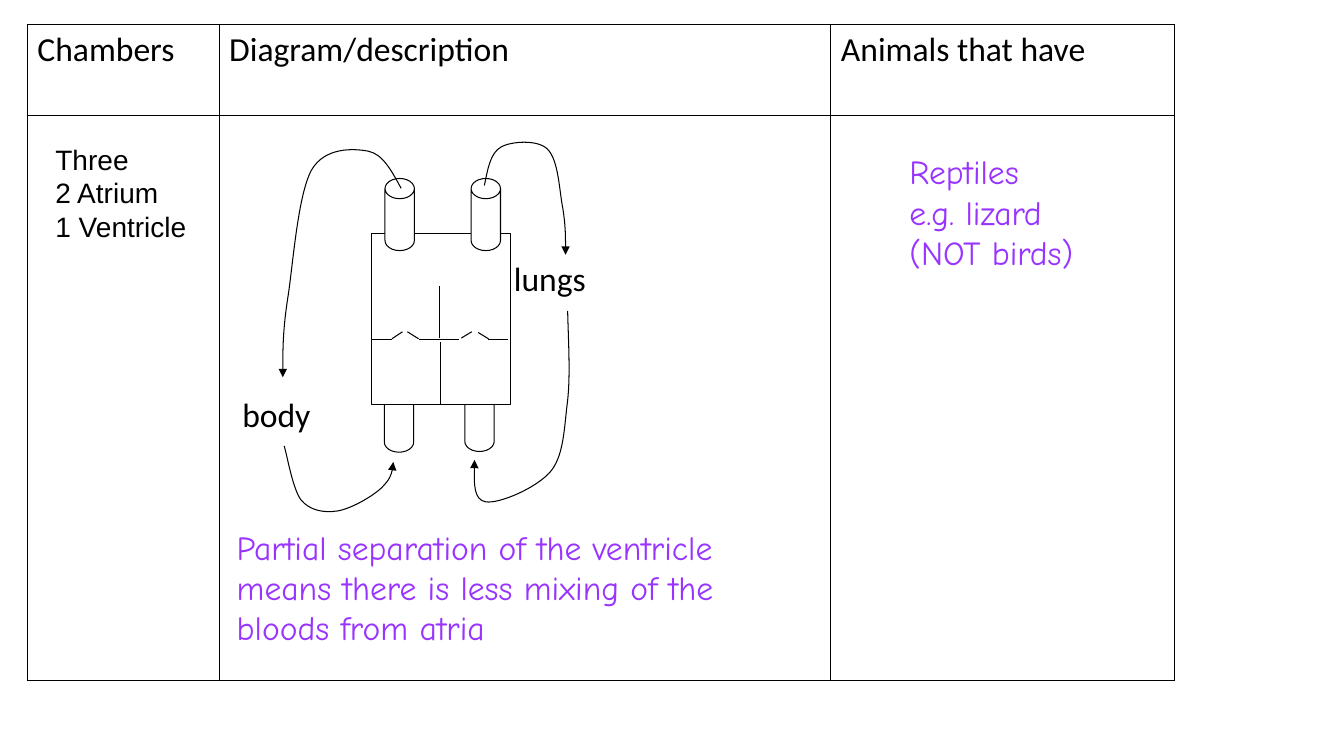
import pptx
import pptx.dml.color
import pptx.enum.dml
import pptx.enum.shapes
import pptx.enum.text
import pptx.oxml
import pptx.util
from lxml import etree

Pt = pptx.util.Pt
SHAPE = pptx.enum.shapes.MSO_SHAPE
BLACK = pptx.dml.color.RGBColor(0x00, 0x00, 0x00)
WHITE = pptx.dml.color.RGBColor(0xFF, 0xFF, 0xFF)
PURPLE = pptx.dml.color.RGBColor(0x99, 0x33, 0xFF)
NAMESPACE = "http://schemas.openxmlformats.org/drawingml/2006/main"

presentation = pptx.Presentation()
presentation.slide_width = Pt(960)
presentation.slide_height = Pt(540)
slide = presentation.slides.add_slide(presentation.slide_layouts[6])
shapes = slide.shapes


def style_outline(shape):
    shape.line.color.rgb = BLACK
    shape.line.width = Pt(0.75)


def add_label(left, top, width, height, lines, font_name, size, color, wrap=True):
    frame = shapes.add_textbox(Pt(left), Pt(top), Pt(width), Pt(height)).text_frame
    frame.word_wrap = wrap
    frame.text = "\n".join(lines)
    for paragraph in frame.paragraphs:
        paragraph.font.name = font_name
        paragraph.font.size = Pt(size)
        paragraph.font.color.rgb = color


# Table with ruled cells
table = shapes.add_table(2, 3, Pt(19.5), Pt(17.5), Pt(819.5), Pt(468.5)).table
for column, width in zip(table.columns, (137, 437, 245.5)):
    column.width = Pt(width)
for row, height in zip(table.rows, (65, 403.5)):
    row.height = Pt(height)
for cell, heading in zip(table.rows[0].cells,
                         ("Chambers", "Diagram/description", "Animals that have")):
    cell.text = heading
    paragraph = cell.text_frame.paragraphs[0]
    paragraph.font.name = "Calibri"
    paragraph.font.size = Pt(24)
    paragraph.font.bold = False
    paragraph.font.color.rgb = BLACK
for cell in table.iter_cells():
    properties = cell._tc.get_or_add_tcPr()
    for side in ("lnL", "lnR", "lnT", "lnB"):
        properties.append(pptx.oxml.parse_xml(
            f'<a:{side} xmlns:a="{NAMESPACE}" w="12700"><a:solidFill>'
            f'<a:srgbClr val="{BLACK}"/></a:solidFill></a:{side}>'))
    cell.fill.background()

# Heart and its vessels: lower vessels, body, upper vessels
heart_parts = []
for kind, left, top, width, height in (
    (SHAPE.CAN, 274.5, 271.5, 21, 51.5),
    (SHAPE.CAN, 332, 271, 21, 51.5),
    (SHAPE.FLOWCHART_PROCESS, 265.5, 167, 99, 122),
    (SHAPE.CAN, 275, 127.5, 21, 51.5),
    (SHAPE.CAN, 336.5, 127.5, 21, 51.5),
):
    shape = shapes.add_shape(kind, Pt(left), Pt(top), Pt(width), Pt(height))
    shape.shadow.inherit = False
    shape.fill.solid()
    shape.fill.fore_color.rgb = WHITE
    style_outline(shape)
    if kind == SHAPE.CAN:
        shape.adjustments[0] = 0.688
    heart_parts.append(shape)
heart = heart_parts[2]

# Septum, chamber walls and valve flaps
walls = []
for x1, y1, x2, y2 in (
    (315, 289, 315, 244),
    (299.5, 242.5, 328, 242.5),
    (280, 242.5, 265.5, 242.5),
    (363, 242.5, 348.5, 242.5),
    (280, 242, 287.5, 237),
    (329.5, 241.5, 337, 237),
    (349, 242, 341.5, 237.5),
    (299, 242, 291, 237),
    (314, 241.5, 314, 204.5),
):
    wall = shapes.add_connector(pptx.enum.shapes.MSO_CONNECTOR.STRAIGHT,
                                Pt(x1), Pt(y1), Pt(x2), Pt(y2))
    style_outline(wall)
    etree.SubElement(wall._element.spPr, f"{{{NAMESPACE}}}effectLst")
    walls.append(wall)
walls[0].begin_connect(heart, 2)

# Blood flow arrows: a start point, then two controls and an end per curve
blood_flows = (
    # heart to body
    [(286.5, 134.5), (280, 122.5), (273.5, 110), (263, 108), (252.5, 106),
     (232, 105), (222.5, 121.5), (213, 139), (209.5, 186), (206, 210),
     (202, 235), (202, 252), (202, 269.5)],
    # body to heart
    [(203, 318.5), (205, 324.5), (209, 349), (215, 357), (221, 364.5),
     (231, 366.5), (241, 365), (250.5, 363.5), (265.5, 355), (272.5, 348.5),
     (278.5, 342.5), (281, 336), (281, 330)],
    # heart to lungs
    [(346, 132.5), (348.5, 121), (350, 109.5), (358, 105), (365, 101),
     (384, 99.5), (391, 106.5), (399, 114), (399.5, 136), (402, 148.5),
     (404, 161), (404, 172), (404, 182)],
    # lungs to heart
    [(405.5, 222), (406, 244), (407.5, 267), (405.5, 286), (403, 305),
     (403, 324), (394, 336), (384, 348.5), (356.5, 360), (347, 358.5),
     (338.5, 357), (338.5, 343), (339, 328.5)],
)
for start, *points in blood_flows:
    builder = shapes.build_freeform(Pt(start[0]), Pt(start[1]))
    builder.add_line_segments([(Pt(x), Pt(y)) for x, y in points], close=False)
    arrow = builder.convert_to_shape()
    # Merge every three segments into one Bézier curve
    segments = list(arrow._element.iter(f"{{{NAMESPACE}}}lnTo"))
    for first in range(0, len(segments), 3):
        curve = etree.Element(f"{{{NAMESPACE}}}cubicBezTo")
        segments[first].addprevious(curve)
        for segment in segments[first:first + 3]:
            curve.append(segment[0])
            segment.getparent().remove(segment)
    arrow.shadow.inherit = False
    arrow.fill.background()
    style_outline(arrow)
    etree.SubElement(arrow.line._get_or_add_ln(), f"{{{NAMESPACE}}}tailEnd", type="triangle")

# Labels and notes
add_label(32.5, 98, 130, 96.5, ["Three", "2 Atrium", "1 Ventricle"],
          "Arial", 20, BLACK, wrap=False)
add_label(166, 278, 105, 57.5, ["body"], "Calibri", 24, BLACK)
add_label(360, 180.5, 105, 57.5, ["lungs"], "Calibri", 24, BLACK)
add_label(162, 372.5, 427.5, 94.5,
          ["Partial separation of the ventricle means there is less mixing "
           "of the bloods from atria"], "Comic Neue", 24, PURPLE)
add_label(642.5, 104.5, 223, 94.5, ["Reptiles", "e.g. lizard", "(NOT birds)"],
          "Comic Neue", 24, PURPLE)

presentation.save("out.pptx")
